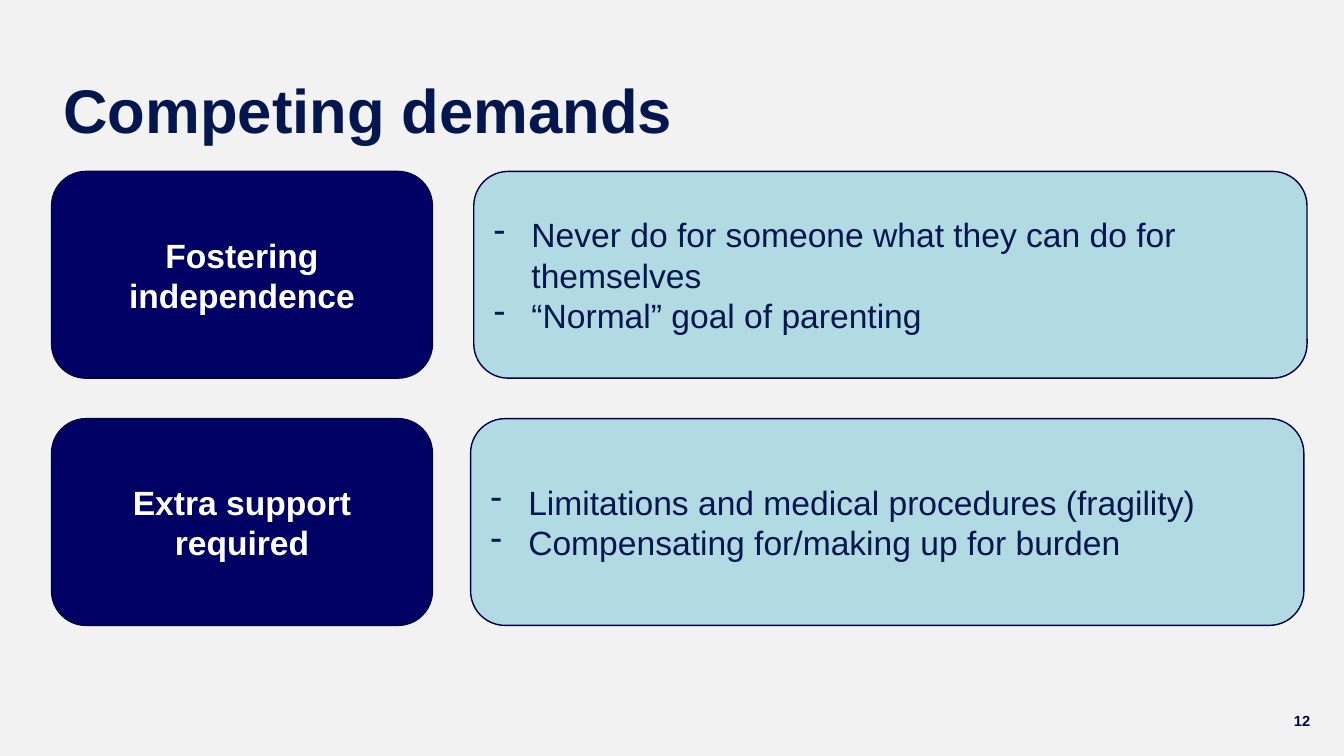
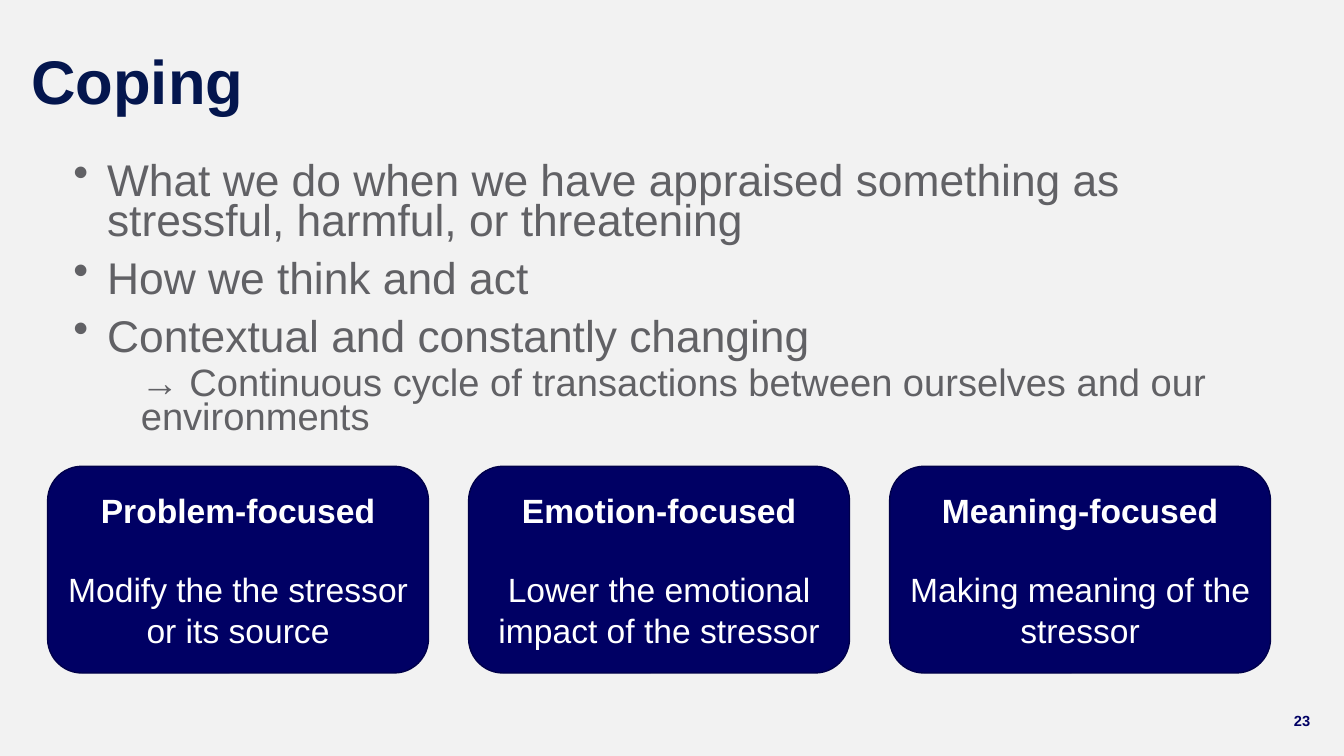
import pptx
import pptx.dml.color
import pptx.enum.shapes
import pptx.enum.text
import pptx.oxml.ns
import pptx.util
from dataclasses import dataclass
from lxml import etree

Cm = pptx.util.Cm
Pt = pptx.util.Pt
Color = pptx.dml.color.RGBColor.from_string
Align = pptx.enum.text.PP_ALIGN
Anchor = pptx.enum.text.MSO_ANCHOR


@dataclass(frozen=True)
class Theme:
    font: str = "Arial"
    background: str = "F2F2F2"
    title: str = "04164E"
    body: str = "616165"
    navy: str = "000064"
    pale: str = "B1DAE3"
    outline: str = "00004A"
    white: str = "FFFFFF"
    title_size: float = 44
    body_size: float = 31.7
    detail_size: float = 27.2
    card_size: float = 24
    number_size: float = 10.5


theme = Theme()


def write(box, lines, size, color, bold=False, align=Align.LEFT,
          anchor=Anchor.MIDDLE, bullet=None, indent=0):
    """Fill a box with one paragraph per line; indent is the hanging bullet indent in cm."""
    frame = box.text_frame
    frame.word_wrap = True
    frame.vertical_anchor = anchor
    frame.text = "\n".join(lines)
    for para in frame.paragraphs:
        para.alignment = align
        if bullet:
            properties = para._p.get_or_add_pPr()
            properties.set("marL", str(Cm(indent)))
            properties.set("indent", str(-Cm(indent)))
            mark = etree.SubElement(properties, pptx.oxml.ns.qn("a:buChar"))
            mark.set("char", bullet)
        for span in para.runs:
            span.font.name = theme.font
            span.font.size = Pt(size)
            span.font.bold = bold
            span.font.color.rgb = Color(color)
    return frame.paragraphs


def add_card(page, left, top, width, fill):
    card = page.shapes.add_shape(
        pptx.enum.shapes.MSO_SHAPE.ROUNDED_RECTANGLE,
        Cm(left), Cm(top), Cm(width), Cm(card_height))
    card.shadow.inherit = False
    card.fill.solid()
    card.fill.fore_color.rgb = Color(fill)
    card.line.color.rgb = Color(theme.outline)
    card.line.width = Pt(1)
    return card


deck = pptx.Presentation()
deck.slide_width = Cm(33.87)
deck.slide_height = Cm(19.05)
master_fill = deck.slide_master.background.fill
master_fill.solid()
master_fill.fore_color.rgb = Color(theme.background)

card_width = 9.6
card_height = 5.21

# Title and page number on every slide
pages = []
for title, number, left, top in [
    ("Competing demands", "12", 1.6, 0.97),
    ("Coping", "23", 0.79, 0.25),
]:
    page = deck.slides.add_slide(deck.slide_layouts[6])
    title_box = page.shapes.add_textbox(Cm(left), Cm(top), Cm(30.66), Cm(3.76))
    title_box.text_frame.margin_left = 0
    write(title_box, [title], theme.title_size, theme.title, bold=True)[0].line_spacing = 0.9
    number_box = page.shapes.add_textbox(Cm(32.36), Cm(17.65), Cm(0.97), Cm(1.02))
    write(number_box, [number], theme.number_size, theme.navy, bold=True)
    pages.append(page)
demands_page, coping_page = pages

# Competing demands: a label card beside a list card in each row
demands = [
    ("Fostering independence", 11.94,
     ["Never do for someone what they can do for themselves",
      "“Normal” goal of parenting"]),
    ("Extra support required", 11.86,
     ["Limitations and medical procedures (fragility)",
      "Compensating for/making up for burden"]),
]
for row, (label, list_left, points) in enumerate(demands):
    top = 4.32 + row * 6.23
    label_card = add_card(demands_page, 1.3, top, card_width, theme.navy)
    write(label_card, [label], theme.card_size, theme.white, bold=True, align=Align.CENTER)
    list_card = add_card(demands_page, list_left, top, 21, theme.pale)
    write(list_card, points, theme.card_size, theme.title, bullet="-", indent=0.95)

# Coping: definition, then three equally spaced strategies
definition_box = coping_page.shapes.add_textbox(Cm(1.6), Cm(4.04), Cm(31.47), Cm(7.01))
definition = write(
    definition_box,
    ["What we do when we have appraised something as stressful, harmful, or threatening",
     "How we think and act",
     "Contextual and constantly changing",
     "→ Continuous cycle of transactions between ourselves and our environments"],
    theme.body_size, theme.body, anchor=Anchor.TOP, bullet="•", indent=0.85)
for para in definition:
    para.line_spacing = 0.74
for para in definition[1:-1]:
    para.space_before = Pt(13.3)

detail = definition[-1]
detail.level = 1
detail.space_before = Pt(6.7)
detail.runs[0].font.size = Pt(theme.detail_size)
detail_properties = detail._p.get_or_add_pPr()
detail_properties.set("marL", str(Cm(1.7)))
detail_properties.set("indent", "0")
detail_properties.remove(detail_properties.find(pptx.oxml.ns.qn("a:buChar")))
etree.SubElement(detail_properties, pptx.oxml.ns.qn("a:buNone"))

strategies = [
    ("Problem-focused", "Modify the the stressor or its source"),
    ("Emotion-focused", "Lower the emotional impact of the stressor"),
    ("Meaning-focused", "Making meaning of the stressor"),
]
for column, strategy in enumerate(strategies):
    card = add_card(coping_page, 1.2 + column * 10.61, 11.75, card_width, theme.navy)
    heading, explanation = write(card, strategy, theme.card_size, theme.white,
                                 align=Align.CENTER)
    heading.runs[0].font.bold = True
    explanation.space_before = Pt(28)

deck.save("out.pptx")
